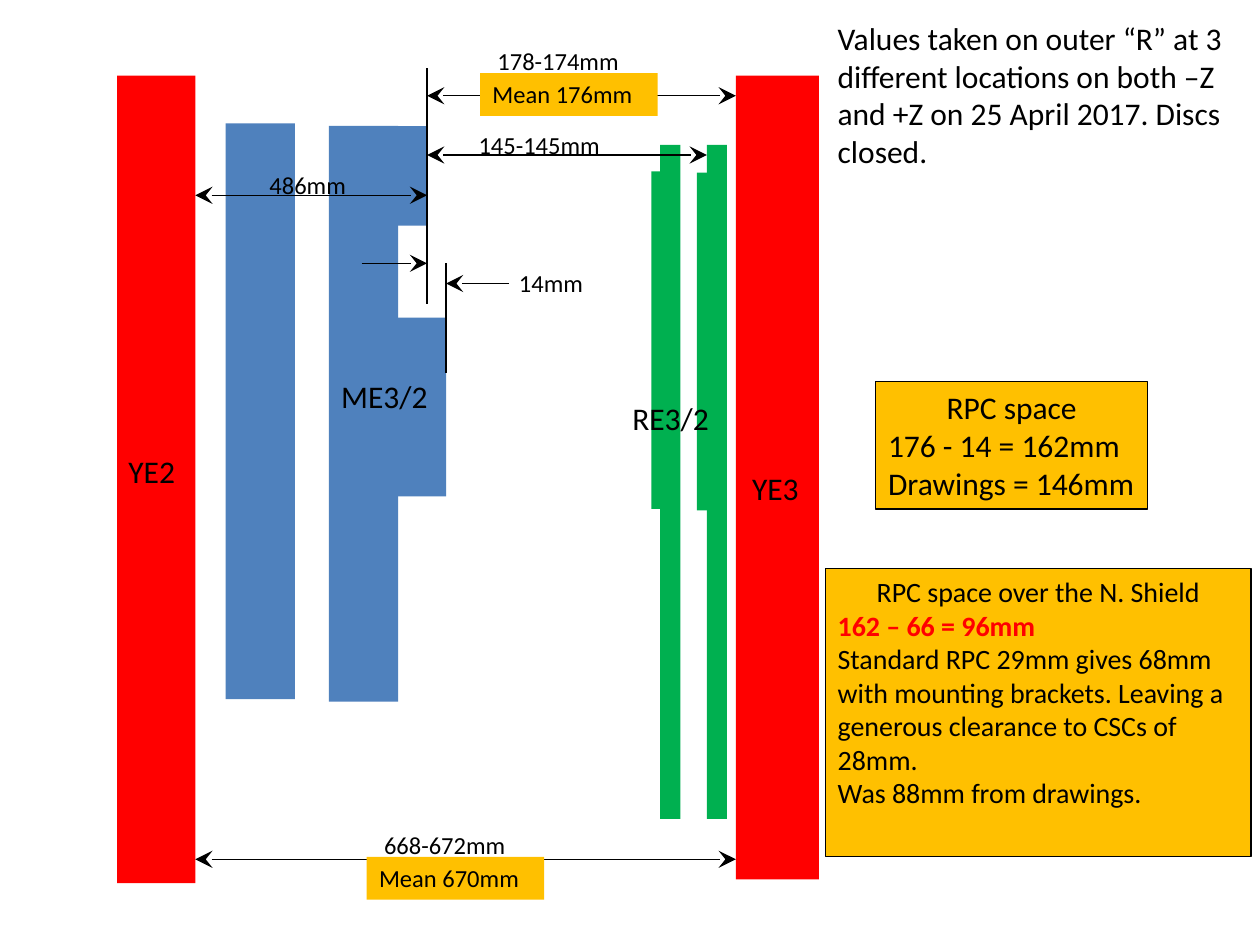
from lxml import etree
from pptx import Presentation
from pptx.dml.color import RGBColor
from pptx.enum.shapes import MSO_CONNECTOR, MSO_SHAPE
from pptx.enum.text import MSO_ANCHOR, PP_ALIGN
from pptx.oxml.ns import qn
from pptx.util import Inches, Pt

RECT = MSO_SHAPE.RECTANGLE
STRAIGHT = MSO_CONNECTOR.STRAIGHT
TOP = MSO_ANCHOR.TOP
LEFT, CENTER = PP_ALIGN.LEFT, PP_ALIGN.CENTER

THEME = {
    "font": "Calibri",
    "text": RGBColor(0, 0, 0),
    "yoke": RGBColor(0xFF, 0, 0),
    "csc": RGBColor(0x4F, 0x81, 0xBD),
    "rpc": RGBColor(0, 0xB0, 0x50),
    "note": RGBColor(0xFF, 0xC0, 0),
    "body": 18,
    "detail": 16,
    "label": 14,
    "line": 0.75,
}

YE2_FACE, YE3_FACE = 1.55, 5.84
CSC_FACE, CSC_STEP, RPC_FACE = 3.39, 3.54, 5.61

DETECTOR = [
    ("yoke", [(0.93, 0.6, 0.62, 6.41), (YE3_FACE, 0.6, 0.66, 6.38)]),
    ("csc", [(2.61, 1, 0.55, 4.57), (3.15, 1, 0.24, 0.79),
             (3.15, 2.52, 0.39, 1.42), (1.79, 0.98, 0.55, 4.57)]),
    ("rpc", [(5.24, 1.15, 0.16, 5.35), (RPC_FACE, 1.15, 0.16, 5.35),
             (5.17, 1.36, 0.09, 2.68), (5.53, 1.37, 0.09, 2.68)]),
]

BOTH, END, PLAIN = ("headEnd", "tailEnd"), ("tailEnd",), ()
LINES = [
    ((YE2_FACE, 1.55), (CSC_FACE, 1.55), BOTH),
    ((CSC_FACE, 0.76), (YE3_FACE, 0.76), BOTH),
    ((CSC_FACE, 1.23), (RPC_FACE, 1.23), BOTH),
    ((YE2_FACE, 6.82), (YE3_FACE, 6.82), BOTH),
    ((CSC_FACE, 0.54), (CSC_FACE, 2.41), PLAIN),
    ((CSC_STEP, 2.09), (CSC_STEP, 2.96), PLAIN),
    ((2.87, 2.09), (CSC_FACE, 2.09), END),
    ((4.04, 2.25), (CSC_STEP, 2.25), END),
]

LABELS = [
    ((6.55, 0.1, 3.33, 1.31), "body",
     "Values taken on outer “R” at 3 different locations on both –Z and +Z "
     "on 25 April 2017. Discs closed."),
    ((2.04, 1.3, 0.89, 0.34), "label", "486mm"),
    ((3.85, 0.32, 1.2, 0.34), "label", "178-174mm"),
    ((2.95, 6.54, 1.26, 0.34), "label", "668-672mm"),
    ((4.02, 2.08, 0.88, 0.34), "label", "14mm"),
    ((3.7, 0.98, 1.2, 0.34), "label", "145-145mm"),
    ((0.92, 3.54, 0.69, 0.4), "body", "YE2"),
    ((5.87, 3.67, 0.69, 0.4), "body", "YE3"),
    ((2.61, 2.94, 1.07, 0.4), "body", "ME3/2"),
    ((4.92, 3.12, 0.94, 0.4), "body", "RE3/2"),
]

MEANS = [
    ((3.81, 0.58, 1.41, 0.34), "Mean 176mm"),
    ((2.91, 6.8, 1.41, 0.34), "Mean 670mm"),
]

NOTES = [
    ((6.95, 3.03, 2.16, 1.01), "body", [
        ("RPC space", CENTER, "text"),
        ("176 - 14 = 162mm", LEFT, "text"),
        ("Drawings = 146mm", LEFT, "text"),
    ]),
    ((6.55, 4.51, 3.38, 2.29), "detail", [
        ("RPC space over the N. Shield", CENTER, "text"),
        ("162 – 66 = 96mm", LEFT, "yoke"),
        ("Standard RPC 29mm gives 68mm with mounting brackets. Leaving a "
         "generous clearance to CSCs of 28mm.", LEFT, "text"),
        ("Was 88mm from drawings.", LEFT, "text"),
    ]),
]


def add_rect(slide, box, fill, outlined=False):
    sp = slide.shapes.add_shape(RECT, *map(Inches, box))
    sp.shadow.inherit = False
    sp.fill.solid()
    sp.fill.fore_color.rgb = THEME[fill]
    if outlined:
        sp.line.color.rgb = THEME["text"]
        sp.line.width = Pt(THEME["line"])
    else:
        sp.line.fill.background()
    return sp


def write(sp, size, paragraphs):
    tf = sp.text_frame
    tf.word_wrap = True
    tf.vertical_anchor = TOP
    for i, (text, align, color) in enumerate(paragraphs):
        p = tf.paragraphs[0] if i == 0 else tf.add_paragraph()
        p.text = text
        p.alignment = align
        p.font.name = THEME["font"]
        p.font.size = Pt(THEME[size])
        p.font.color.rgb = THEME[color]
        p.font.bold = color != "text"


def add_line(slide, start, end, arrows):
    line = slide.shapes.add_connector(STRAIGHT, *map(Inches, start + end))
    line.line.color.rgb = THEME["text"]
    line.line.width = Pt(THEME["line"])
    ln = line.line._get_or_add_ln()
    for tag in arrows:
        etree.SubElement(ln, qn(f"a:{tag}"), type="stealth", w="lg", len="lg")
    etree.SubElement(line._element.spPr, qn("a:effectLst"))


def main():
    prs = Presentation()
    prs.slide_width, prs.slide_height = Inches(10), Inches(7.5)
    slide = prs.slides.add_slide(prs.slide_layouts[6])

    for fill, boxes in DETECTOR:
        for box in boxes:
            add_rect(slide, box, fill)
    for start, end, arrows in LINES:
        add_line(slide, start, end, arrows)
    for box, size, text in LABELS:
        sp = slide.shapes.add_textbox(*map(Inches, box))
        write(sp, size, [(text, LEFT, "text")])
    for box, text in MEANS:
        write(add_rect(slide, box, "note"), "label", [(text, LEFT, "text")])
    for box, size, paragraphs in NOTES:
        write(add_rect(slide, box, "note", outlined=True), size, paragraphs)

    prs.save("out.pptx")


if __name__ == "__main__":
    main()
